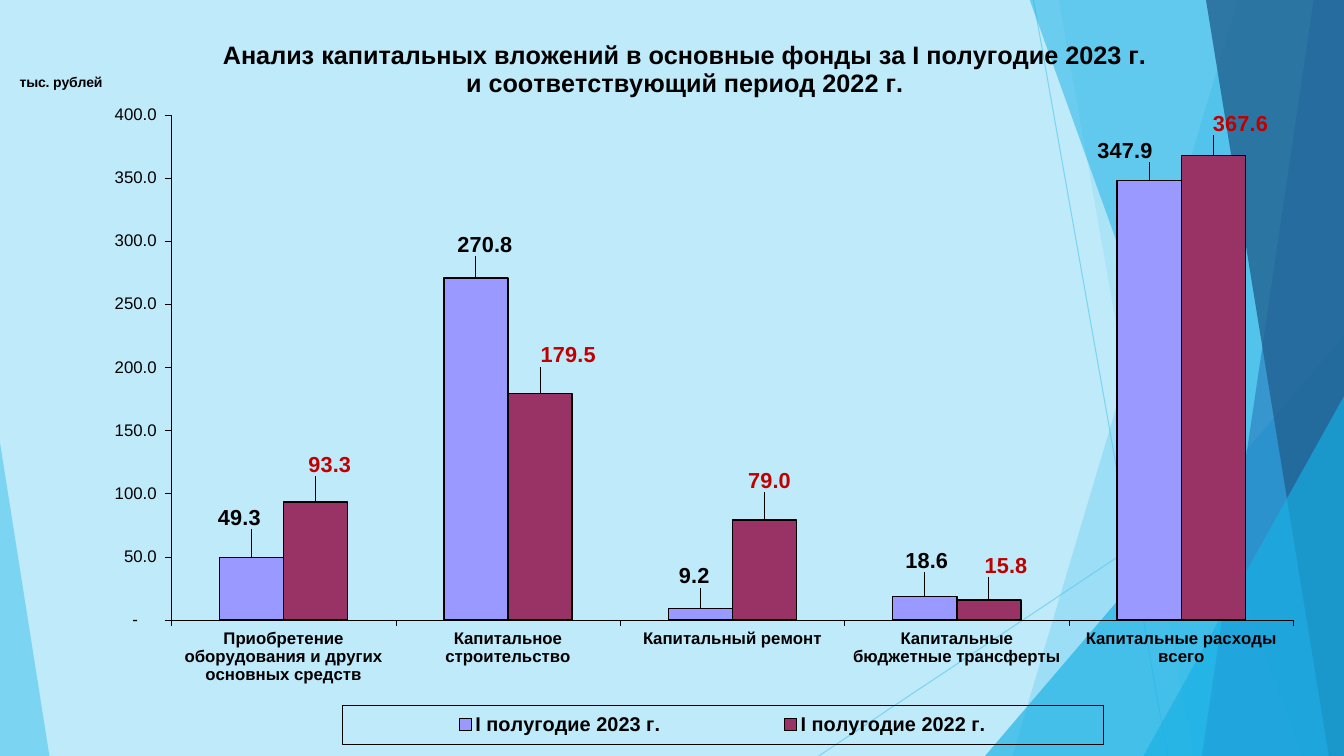
from lxml import etree
from pptx import Presentation
from pptx import util as u
from pptx.chart.data import CategoryChartData
from pptx.dml.color import RGBColor
from pptx.enum import chart as ch
from pptx.enum import shapes, text
from pptx.oxml import parse_xml
from pptx.oxml.ns import nsdecls, qn

BLACK = RGBColor(0x00, 0x00, 0x00)
RED = RGBColor(0xC0, 0x00, 0x00)
LILAC = RGBColor(0x99, 0x99, 0xFF)
PLUM = RGBColor(0x99, 0x33, 0x66)
PALE = RGBColor(0xBF, 0xEA, 0xF9)
SKY = RGBColor(0x5F, 0xCB, 0xEF)
CYAN = RGBColor(0x17, 0xB0, 0xE4)
BLUE = RGBColor(0x2E, 0x83, 0xC3)
NAVY = RGBColor(0x22, 0x62, 0x92)

WIDTH, HEIGHT = 13.33, 7.5
CHART_LEFT, CHART_TOP, CHART_WIDTH, CHART_HEIGHT = 0, 0.2, 13, 7.19
ACCOUNTING = '_(* #,##0.0_);_(* \\(#,##0.0\\);_(* "-"??_);_(@_)'

CATEGORIES = [
    "Приобретение оборудования и других основных средств",
    "Капитальное строительство",
    "Капитальный ремонт",
    "Капитальные бюджетные трансферты",
    "Капитальные расходы всего",
]
# name, values, bar colour, label colour, label shifts in inches
PERIODS = [
    ("I полугодие 2023 г.", [49.3, 270.8, 9.2, 18.6, 347.9], LILAC, BLACK,
     [(-0.12, -0.24), (0.09, -0.17), (-0.06, -0.16), (0.02, -0.2), (-0.24, -0.14)]),
    ("I полугодие 2022 г.", [93.3, 179.5, 79, 15.8, 367.6], PLUM, RED,
     [(0.14, -0.21), (0.28, -0.22), (0.05, -0.23), (0.17, -0.18), (0.27, -0.16)]),
]


def set_font(font, size, color=BLACK, bold=False):
    font.name = "Arial"
    font.size = u.Pt(size)
    font.bold = bold
    font.color.rgb = color


def write(frame, wording, **style):
    """Fill a text frame, one centred paragraph for each line."""
    for number, line in enumerate(wording.split("\n")):
        paragraph = frame.add_paragraph() if number else frame.paragraphs[0]
        paragraph.alignment = text.PP_ALIGN.CENTER
        run = paragraph.add_run()
        run.text = line
        set_font(run.font, **style)


def set_line(line, color=BLACK, width=0.25):
    line.color.rgb = color
    line.width = u.Pt(width)


def set_alpha(element, percent):
    for color in element.spPr.iter(qn("a:srgbClr")):
        etree.SubElement(color, qn("a:alpha"), val=str(percent * 1000))


def paint(shape, color, percent):
    shape.shadow.inherit = False
    shape.fill.solid()
    shape.fill.fore_color.rgb = color
    shape.line.fill.background()
    set_alpha(shape._element, percent)


def add_ray(slide, start, end):
    ray = slide.shapes.add_connector(
        shapes.MSO_CONNECTOR.STRAIGHT, *(u.Inches(v) for v in start + end))
    set_line(ray.line, SKY, 0.75)
    set_alpha(ray._element, 70)
    etree.SubElement(ray._element.spPr, qn("a:effectLst"))


def add_facet(slide, top_x, bottom_x, color, percent):
    """Full-height panel from a slanted left edge to the slide's right edge."""
    corners = [(top_x, -0.01), (WIDTH, -0.01), (WIDTH, HEIGHT), (bottom_x, HEIGHT)]
    points = [(u.Inches(x), u.Inches(y)) for x, y in corners]
    builder = slide.shapes.build_freeform(*points[0])
    builder.add_line_segments(points[1:], close=True)
    paint(builder.convert_to_shape(), color, percent)


def add_corner(slide, left, top, width, apex, color, percent):
    """Triangle standing on the slide's bottom edge."""
    box = (left, top, width, HEIGHT - top)
    corner = slide.shapes.add_shape(
        shapes.MSO_SHAPE.ISOSCELES_TRIANGLE, *(u.Inches(v) for v in box))
    corner.adjustments[0] = apex
    paint(corner, color, percent)


def add_backdrop(slide):
    slide.background.fill.solid()
    slide.background.fill.fore_color.rgb = PALE
    add_ray(slide, (10.25, 0), (11.58, HEIGHT))
    add_ray(slide, (WIDTH, 4.03), (8.12, HEIGHT))
    add_facet(slide, 12.28, 10.04, SKY, 36)
    add_facet(slide, 10.5, 11.83, SKY, 20)
    add_corner(slide, 9.77, 3.33, 3.56, 1, CYAN, 66)
    add_facet(slide, 10.21, 12.91, CYAN, 50)
    add_facet(slide, 13.03, 11.92, BLUE, 70)
    add_facet(slide, 11.96, 13.18, NAVY, 80)
    add_corner(slide, 11.34, 3.93, 1.99, 1, CYAN, 66)
    add_corner(slide, 0, 4.39, 0.49, 0, SKY, 70)


def place(part, index, x, y, w=None, h=None, inner=False, shift=False):
    """Give a chart part a manual layout in inches, as its child at index."""
    for old in part.findall(qn("c:layout")):
        part.remove(old)
    layout = parse_xml(f"<c:layout {nsdecls('c')}><c:manualLayout/></c:layout>")
    settings = [("layoutTarget", "inner")] if inner else []
    if not shift:
        settings += [("xMode", "edge"), ("yMode", "edge")]
    settings += [("x", x / CHART_WIDTH), ("y", y / CHART_HEIGHT)]
    if w:
        settings += [("w", w / CHART_WIDTH), ("h", h / CHART_HEIGHT)]
    for tag, value in settings:
        etree.SubElement(layout[0], qn(f"c:{tag}"), val=str(value))
    part.insert(index, layout)


def format_axes(chart):
    for axis, bold in ((chart.category_axis, True), (chart.value_axis, False)):
        axis.has_major_gridlines = False
        axis.major_tick_mark = ch.XL_TICK_MARK.OUTSIDE
        axis.minor_tick_mark = ch.XL_TICK_MARK.NONE
        axis.tick_label_position = ch.XL_TICK_LABEL_POSITION.LOW
        set_font(axis.tick_labels.font, 12, bold=bold)
        set_line(axis.format.line)
    amounts = chart.value_axis
    amounts.minimum_scale, amounts.maximum_scale, amounts.major_unit = 0, 400, 50
    amounts.tick_labels.number_format = ACCOUNTING
    amounts.tick_labels.number_format_is_linked = False
    unit = amounts.axis_title
    write(unit.text_frame, "тыс. рублей", size=10, bold=True)
    unit.text_frame._txBody.bodyPr.set("rot", "0")
    unit.text_frame._txBody.bodyPr.set("vert", "horz")
    place(unit._element, 1, 0.17, 0.5)


def format_period(series, bar_color, label_color, shifts):
    series.format.fill.solid()
    series.format.fill.fore_color.rgb = bar_color
    set_line(series.format.line, width=1)
    labels = series.data_labels
    labels.show_value = True
    labels.number_format = ACCOUNTING
    labels.number_format_is_linked = False
    labels.position = ch.XL_LABEL_POSITION.OUTSIDE_END
    set_font(labels.font, 15.5, label_color, bold=True)
    for number, (dx, dy) in enumerate(shifts):
        label = series.points[number].data_label
        set_font(label.font, 15.5, label_color, bold=True)
        label.position = ch.XL_LABEL_POSITION.OUTSIDE_END
        place(label._dLbl, 1, dx, dy, shift=True)


def format_legend(chart):
    chart.has_legend = True
    legend = chart.legend
    legend.position = ch.XL_LEGEND_POSITION.BOTTOM
    legend.include_in_layout = False
    set_font(legend.font, 14.2, bold=True)
    place(legend._element, 1, 3.39, 6.8, 7.55, 0.38)
    border = parse_xml(
        f'<c:spPr {nsdecls("c", "a")}><a:noFill/><a:ln w="3175"><a:solidFill>'
        f'<a:srgbClr val="{BLACK}"/></a:solidFill></a:ln></c:spPr>')
    legend._element.find(qn("c:txPr")).addprevious(border)


def add_investment_chart(slide):
    data = CategoryChartData(number_format=ACCOUNTING)
    data.categories = CATEGORIES
    for name, values, *_ in PERIODS:
        data.add_series(name, values)
    box = (CHART_LEFT, CHART_TOP, CHART_WIDTH, CHART_HEIGHT)
    chart = slide.shapes.add_chart(
        ch.XL_CHART_TYPE.COLUMN_CLUSTERED, *(u.Inches(v) for v in box), data).chart
    set_font(chart.font, 15.5)
    write(chart.chart_title.text_frame,
          "Анализ капитальных вложений в основные фонды за I полугодие 2023 г.\n"
          "и соответствующий период 2022 г.", size=18, bold=True)
    place(chart.chart_title._element, 1, 2.18, 0.16)
    plot = chart.plots[0]
    plot.gap_width, plot.overlap, plot.vary_by_categories = 150, 0, False
    format_axes(chart)
    for series, (_, _, *look) in zip(plot.series, PERIODS):
        format_period(series, *look)
    format_legend(chart)
    place(chart._chartSpace.chart.plotArea, 0, 1.7, 0.94, 11.13, 5.01, inner=True)


def main():
    deck = Presentation()
    deck.slide_width, deck.slide_height = u.Inches(WIDTH), u.Inches(HEIGHT)
    slide = deck.slides.add_slide(deck.slide_layouts[6])
    add_backdrop(slide)
    add_investment_chart(slide)
    deck.save("out.pptx")


if __name__ == "__main__":
    main()
